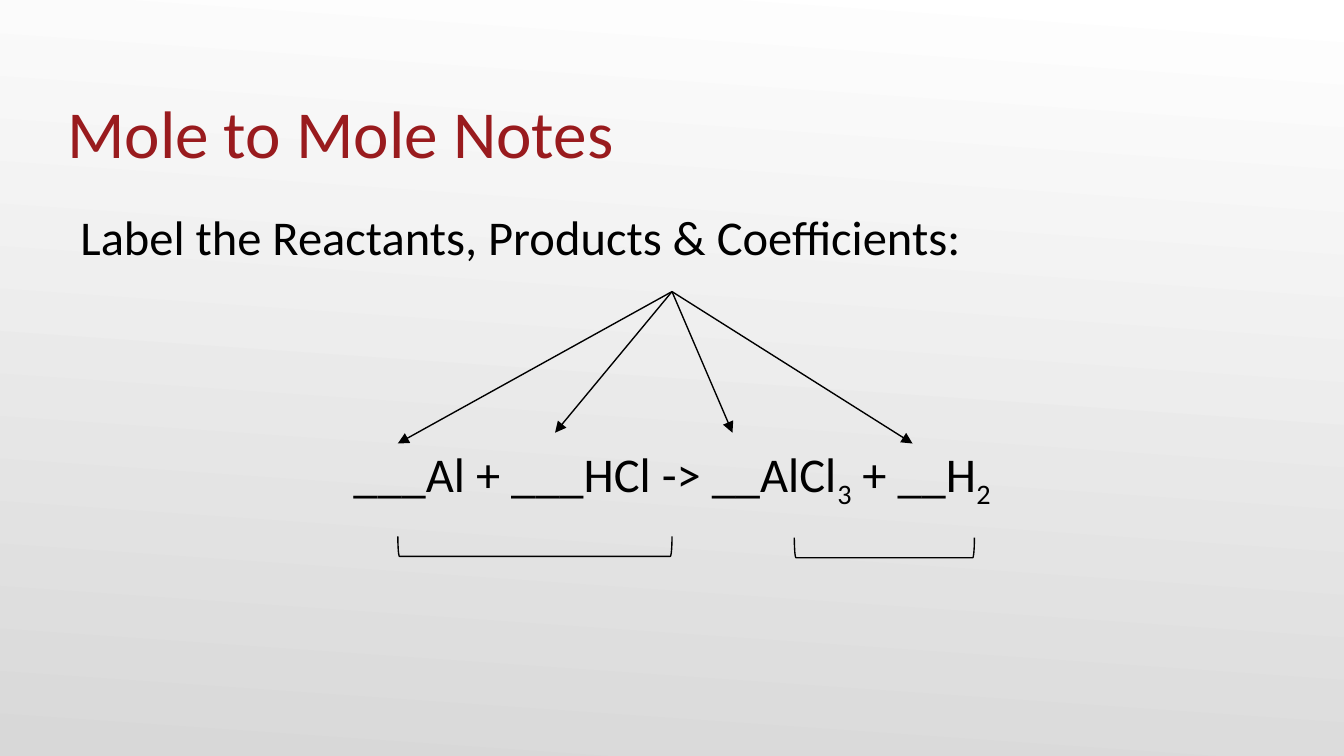
from lxml import etree
from pptx import Presentation, util as u
from pptx.dml import color
from pptx.enum import shapes, text
from pptx.oxml import ns

HUES = {"top": "FFFFFF", "base": "D8D8D8", "title": "991B1E", "ink": "000000"}
LINES = [
    (text.PP_ALIGN.LEFT, 0, [("Label the Reactants, Products & Coefficients:", False)]),
    (text.PP_ALIGN.CENTER, 84, [("___Al + ___HCl -> __AlCl", False), ("3", True),
                                (" + __H", False), ("2", True)]),
]
TIPS = [(-2.04, 1.13), (-0.87, 1.05), (0.45, 1.05), (1.79, 1.13)]
SPANS = [(2.96, 3.99, 2.04), (5.91, 4, 1.34)]


def format(item, values):
    """Set each attribute in values on item."""
    for key, value in values.items():
        setattr(item, key, value)


def hue(name):
    """Return the named colour."""
    return color.RGBColor.from_string(HUES[name])


def set_font(font, size, name):
    """Set the face, size and colour of a font."""
    format(font, {"name": "Calibri", "size": u.Pt(size)})
    font.color.rgb = hue(name)


def set_frame(frame, insets, anchor):
    """Set the insets, in inches, and the anchor of a text frame."""
    sides = ("margin_left", "margin_top", "margin_right", "margin_bottom")
    format(frame, dict(zip(sides, map(u.Inches, insets))))
    format(frame, {"word_wrap": True, "auto_size": text.MSO_AUTO_SIZE.NONE,
                   "vertical_anchor": anchor})


def set_line(line):
    """Give a line its colour and width."""
    line.color.rgb = hue("ink")
    line.width = u.Pt(0.75)


def add_back(slide):
    """Fill the background with a gradient."""
    fill = slide.background.fill
    fill.gradient()
    fill.gradient_angle = 360 - 94
    for stop, name in zip(fill.gradient_stops, ("top", "base")):
        stop.color.rgb = hue(name)


def add_title(slide, left, top, width, height):
    """Place the title in its box."""
    title = slide.shapes.title
    format(title, {"left": u.Inches(left), "top": u.Inches(top),
                   "width": u.Inches(width), "height": u.Inches(height)})
    frame = title.text_frame
    set_frame(frame, (0, 0.05, 0, 0), text.MSO_ANCHOR.BOTTOM)
    frame.text = "Mole to Mole Notes"
    para = frame.paragraphs[0]
    para.alignment = text.PP_ALIGN.LEFT
    set_font(para.runs[0].font, 36, "title")


def add_body(slide, left, top, width, height):
    """Place the prompt and the equation in one box."""
    frame = slide.shapes.add_textbox(*map(u.Inches, (left, top, width, height))).text_frame
    set_frame(frame, (0.1, 0.05, 0.1, 0.05), text.MSO_ANCHOR.TOP)
    for row, (align, gap, parts) in enumerate(LINES):
        para = frame.add_paragraph() if row else frame.paragraphs[0]
        format(para, {"alignment": align, "line_spacing": 1.15,
                      "space_before": u.Pt(gap), "space_after": u.Pt(6)})
        for words, sub in parts:
            run = para.add_run()
            run.text = words
            set_font(run.font, 26, "ink")
            if sub:
                run._r.get_or_add_rPr().set("baseline", "-25000")


def add_rays(slide, left, top):
    """Draw the arrows that fan out from one point to the blanks."""
    for across, down in TIPS:
        ray = slide.shapes.add_connector(
            shapes.MSO_CONNECTOR.STRAIGHT,
            *map(u.Inches, (left, top, left + across, top + down)))
        set_line(ray.line)
        etree.SubElement(ray.line._get_or_add_ln(), ns.qn("a:tailEnd"), type="triangle")
        etree.SubElement(ray._element.spPr, ns.qn("a:effectLst"))


def add_brace(slide, left, top, span, depth=0.15):
    """Draw a bracket that opens upward over a span."""
    inset = (span - depth) / 2
    brace = slide.shapes.add_shape(
        shapes.MSO_SHAPE.RIGHT_BRACKET,
        *map(u.Inches, (left + inset, top - inset, depth, span)))
    brace.rotation = 90
    brace.shadow.inherit = False
    brace.fill.background()
    set_line(brace.line)


def main():
    """Build and save the slide."""
    deck = Presentation()
    format(deck, {"slide_width": u.Inches(10), "slide_height": u.Inches(10 * 9 / 16)})
    slide = deck.slides.add_slide(deck.slide_layouts[5])
    add_back(slide)
    add_title(slide, 0.5, 0.34, 9, 0.94)
    add_body(slide, 0.5, 1.43, 9, 3.76)
    add_rays(slide, 5, 2.17)
    for span in SPANS:
        add_brace(slide, *span)
    deck.save("out.pptx")


if __name__ == "__main__":
    main()
